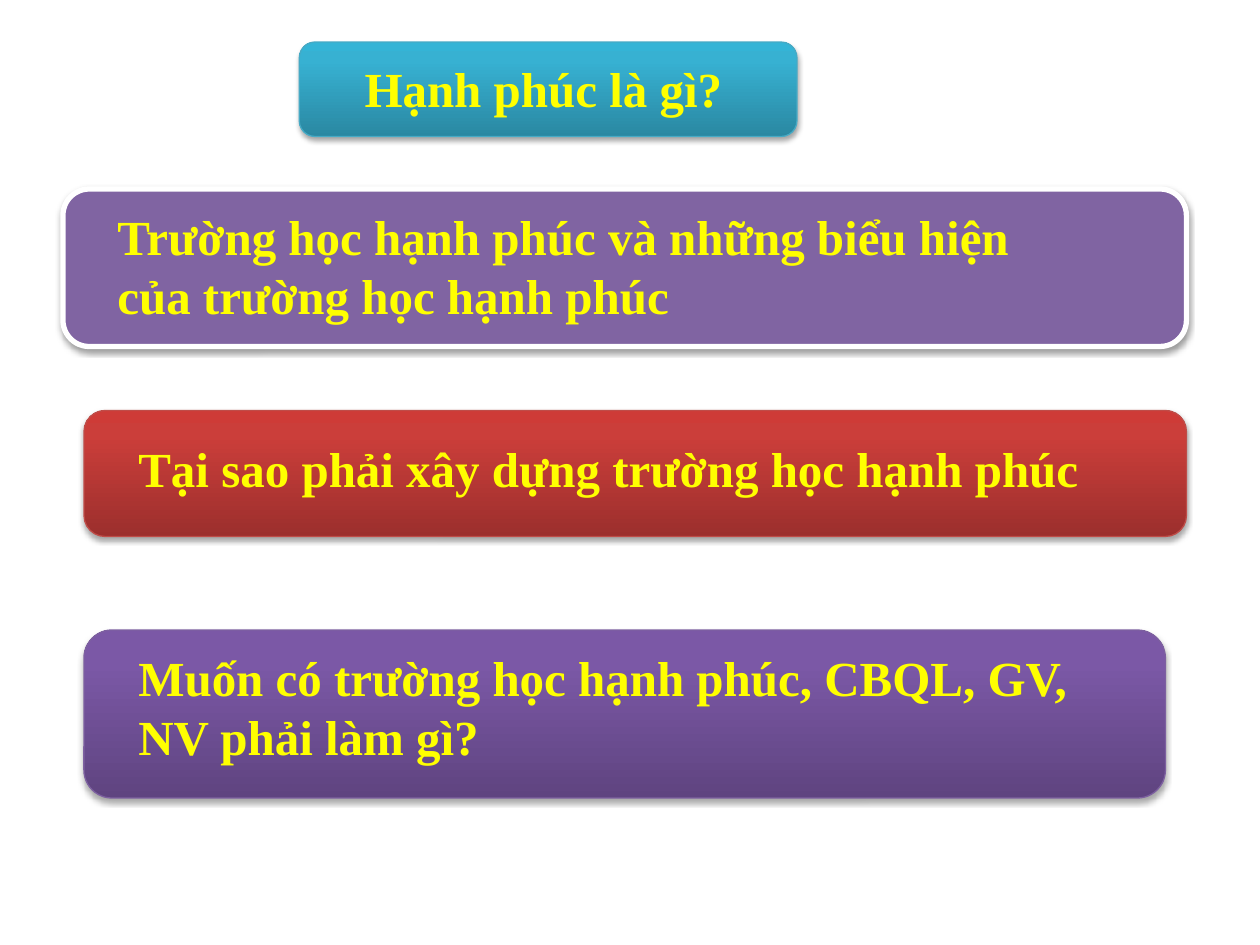
import copy

import pptx
import pptx.dml.color
import pptx.enum.shapes
import pptx.enum.text
import pptx.oxml
import pptx.oxml.ns
import pptx.util

COLUMNS, ROWS = 120, 90
LINE_ROWS = {1: 6.84, 2: 12.48}  # text height by number of lines


def rgb(value):
    return pptx.dml.color.RGBColor.from_string(value)


class Deck:
    text_format = {"name": "Times New Roman", "size": pptx.util.Pt(28), "bold": True}
    text_color = "FFFF00"

    def __init__(self):
        self.presentation = pptx.Presentation()
        self.presentation.slide_width = pptx.util.Inches(10)
        self.presentation.slide_height = pptx.util.Inches(7.5)
        self.slide = self.presentation.slides.add_slide(self.presentation.slide_layouts[5])

    def place(self, left, top, width, height):
        """Turn grid columns and rows into lengths."""
        column = self.presentation.slide_width / COLUMNS
        row = self.presentation.slide_height / ROWS
        return [round(n * unit) for n, unit in zip((left, top, width, height), (column, row) * 2)]

    def panel(self, area, colors, border, border_width=0.75, shadow=(1.8, 35)):
        """Rounded panel; three colours give a gradient rising from the bottom."""
        panel = self.slide.shapes.add_shape(
            pptx.enum.shapes.MSO_SHAPE.ROUNDED_RECTANGLE, *self.place(*area))
        if len(colors) == 1:
            panel.fill.solid()
            panel.fill.fore_color.rgb = rgb(colors[0])
        else:
            self.gradient(panel, colors)
        panel.line.color.rgb = rgb(border)
        panel.line.width = pptx.util.Pt(border_width)
        self.drop_shadow(panel, *shadow)
        return panel

    def gradient(self, panel, colors):
        panel.fill.gradient()
        stops = panel._element.spPr.find(".//" + pptx.oxml.ns.qn("a:gsLst"))
        stops.append(copy.deepcopy(stops[-1]))
        for stop, color, position in zip(panel.fill.gradient_stops, colors, (0, 0.8, 1)):
            stop.color.rgb = rgb(color)
            stop.position = position
        panel.fill.gradient_angle = 90

    def drop_shadow(self, panel, distance, opacity):
        panel.shadow.inherit = False
        effects = panel._element.spPr.find(pptx.oxml.ns.qn("a:effectLst"))
        effects.append(pptx.oxml.parse_xml(
            f'<a:outerShdw {pptx.oxml.ns.nsdecls("a")} blurRad="{pptx.util.Pt(3.1)}" '
            f'dist="{pptx.util.Pt(distance)}" dir="5400000" rotWithShape="0">'
            f'<a:srgbClr val="000000"><a:alpha val="{opacity * 1000}"/></a:srgbClr>'
            '</a:outerShdw>'))

    def set_text(self, box, text, alignment):
        frame = box.text_frame
        frame.text = text
        frame_format = {
            "word_wrap": True,
            "auto_size": pptx.enum.text.MSO_AUTO_SIZE.SHAPE_TO_FIT_TEXT,
            "vertical_anchor": pptx.enum.text.MSO_ANCHOR.TOP,
        }
        for key, value in frame_format.items():
            setattr(frame, key, value)
        paragraph = frame.paragraphs[0]
        paragraph.alignment = alignment
        font = paragraph.runs[0].font
        for key, value in self.text_format.items():
            setattr(font, key, value)
        font.color.rgb = rgb(self.text_color)

    def title(self, text, area, panel):
        """Put the title placeholder in front of its panel."""
        title = self.slide.shapes.title
        title.left, title.top, title.width, title.height = self.place(*area)
        panel._element.addnext(title._element)
        self.set_text(title, text, pptx.enum.text.PP_ALIGN.CENTER)

    def text(self, text, left, top, width, lines):
        area = self.place(left, top, width, LINE_ROWS[lines])
        self.set_text(self.slide.shapes.add_textbox(*area), text, pptx.enum.text.PP_ALIGN.LEFT)


def main():
    deck = Deck()

    heading = deck.panel((28.5, 4, 47.4, 9), ("2A88A2", "37B1D2", "34B4D6"), "46AAC5")
    deck.title("Hạnh phúc là gì?", (29, 5, 45.5, LINE_ROWS[1]), heading)

    deck.panel((6, 18, 107, 15), ("8064A2",), "FFFFFF", border_width=3, shadow=(1.6, 38))
    deck.text("Trường học hạnh phúc và những biểu hiện của trường học hạnh phúc",
              10, 19.1, 95, lines=2)

    deck.panel((8, 39.1, 105, 12), ("9C2F2D", "CB3E3A", "CE3B37"), "BF4C48")
    deck.text("Tại sao phải xây dựng trường học hạnh phúc", 12, 41.2, 93, lines=1)

    deck.panel((8, 60, 103, 16), ("5F4480", "7B58A6", "7C57A8"), "7D60A0")
    deck.text("Muốn có trường học hạnh phúc, CBQL, GV, NV phải làm gì?",
              12, 61.1, 95, lines=2)

    deck.presentation.save("out.pptx")


if __name__ == "__main__":
    main()
